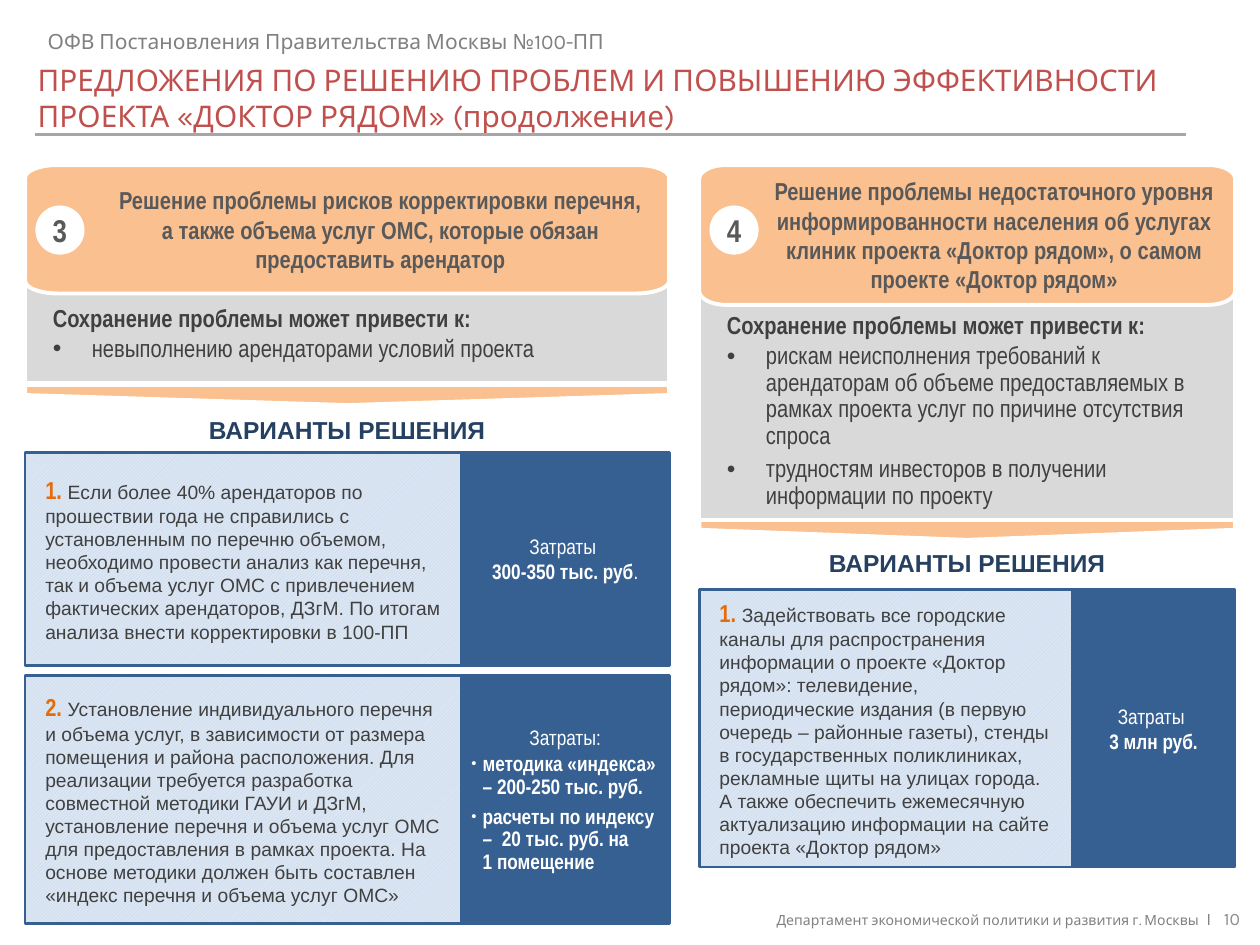
from dataclasses import dataclass
from math import cos, pi, sin

from lxml import etree
from pptx import Presentation
from pptx.dml.color import RGBColor
from pptx.enum.dml import MSO_PATTERN
from pptx.enum.shapes import MSO_CONNECTOR, MSO_SHAPE
from pptx.enum.text import MSO_ANCHOR, PP_ALIGN
from pptx.oxml.ns import qn
from pptx.util import Pt

LEFT, MID, RIGHT = PP_ALIGN.LEFT, PP_ALIGN.CENTER, PP_ALIGN.RIGHT
TOP, CENTER = MSO_ANCHOR.TOP, MSO_ANCHOR.MIDDLE
RECT, PLATE, OVAL = MSO_SHAPE.RECTANGLE, MSO_SHAPE.PENTAGON, MSO_SHAPE.OVAL
HATCH = MSO_PATTERN.LIGHT_UPWARD_DIAGONAL
STRAIGHT = MSO_CONNECTOR.STRAIGHT


@dataclass(frozen=True)
class Theme:
    sans: str = "Arial"
    slim: str = "Arial Narrow"
    brand: str = "Karla"
    white: str = "FFFFFF"
    red: str = "C0504D"
    rule: str = "A6A6A6"
    grey: str = "808080"
    page: str = "8C8C8C"
    peach: str = "FAC090"
    pale: str = "D9D9D9"
    dark: str = "404040"
    head: str = "595959"
    blue: str = "376092"
    navy: str = "254061"
    amber: str = "E46C0A"
    hatch: str = "C0D5EE"
    ice: str = "DCE6F2"
    title: float = 17
    badge: float = 18
    lead: float = 14
    note: float = 12
    text: float = 11
    mark: float = 10
    foot: float = 8


T = Theme()


@dataclass(frozen=True)
class Run:
    text: str
    size: float
    font: str
    color: str
    bold: bool = False


@dataclass(frozen=True)
class Para:
    runs: list[Run]
    align: PP_ALIGN = LEFT
    left: float = 0
    first: float = 0
    space: float = 1
    before: float = 0
    after: float = 0
    bullet: bool = False
    scale: int = 100


@dataclass(frozen=True)
class Box:
    x: float
    y: float
    w: float
    h: float


@dataclass(frozen=True)
class Card:
    y: float
    h: float
    mark: str
    text: str
    costs: list[Para]
    pad: float


@dataclass(frozen=True)
class Column:
    x: float
    w: float
    mark: str
    head: str
    inset: float
    head_h: float
    body: Box
    risks: list[str]
    after: float
    tip: float
    label: float
    split: float
    cards: list[Card]


def rgb(code: str) -> RGBColor:
    return RGBColor.from_string(code)


def write(shape, paras: list[Para], pads=(7.2, 3.6, 7.2, 3.6), anchor=CENTER) -> None:
    frame = shape.text_frame
    frame.word_wrap = True
    frame.vertical_anchor = anchor
    (frame.margin_left, frame.margin_top,
     frame.margin_right, frame.margin_bottom) = map(Pt, pads)
    for i, item in enumerate(paras):
        para = frame.add_paragraph() if i else frame.paragraphs[0]
        para.alignment = item.align
        para.line_spacing = item.space
        para.space_before, para.space_after = Pt(item.before), Pt(item.after)
        props = para._p.get_or_add_pPr()
        props.set("marL", str(Pt(item.left)))
        props.set("indent", str(Pt(item.first)))
        if item.bullet:
            size = etree.SubElement(props, qn("a:buSzPct"))
            size.set("val", str(item.scale * 1000))
            etree.SubElement(props, qn("a:buFont")).set("typeface", T.sans)
            etree.SubElement(props, qn("a:buChar")).set("char", "•")
        for part in item.runs:
            for j, line in enumerate(part.text.split("\n")):
                if j:
                    para.add_line_break()
                run = para.add_run()
                run.text = line
                font = run.font
                font.name, font.size, font.bold = part.font, Pt(part.size), part.bold
                font.color.rgb = rgb(part.color)


def paint(shape, fill: str, line: str = "", width: float = 0) -> None:
    shape.shadow.inherit = False
    shape.fill.solid()
    shape.fill.fore_color.rgb = rgb(fill)
    if line:
        shape.line.color.rgb = rgb(line)
        shape.line.width = Pt(width)
    else:
        shape.line.fill.background()


def add(slide, kind: MSO_SHAPE, box: Box, fill: str, line: str = "", width: float = 0):
    shape = slide.shapes.add_shape(kind, Pt(box.x), Pt(box.y), Pt(box.w), Pt(box.h))
    paint(shape, fill, line, width)
    return shape


def label(slide, box: Box, paras: list[Para], **form) -> None:
    shape = slide.shapes.add_textbox(Pt(box.x), Pt(box.y), Pt(box.w), Pt(box.h))
    write(shape, paras, **form)


def banner(slide, box: Box):
    rx, ry = box.w * 0.05, box.h * 0.1
    hubs = [(box.x + box.w - rx, box.y + box.h - ry), (box.x + rx, box.y + box.h - ry),
            (box.x + rx, box.y + ry), (box.x + box.w - rx, box.y + ry)]
    steps = 10
    dots = [(Pt(cx + rx * cos(a)), Pt(cy + ry * sin(a)))
            for turn, (cx, cy) in enumerate(hubs)
            for a in ((turn + k / steps) * pi / 2 for k in range(steps + 1))]
    pen = slide.shapes.build_freeform(*dots[0])
    pen.add_line_segments(dots[1:], close=True)
    shape = pen.convert_to_shape()
    paint(shape, T.peach, T.white, 2.25)
    return shape


def draw_card(slide, col: Column, card: Card) -> None:
    cost = add(slide, RECT, Box(col.x + col.split, card.y, col.w - col.split, card.h),
               T.blue, T.blue, 1.5)
    write(cost, card.costs, (card.pad, 2.9, card.pad, 2.9))
    plan = add(slide, PLATE, Box(col.x, card.y, col.split, card.h), T.ice, T.blue, 1.5)
    plan.adjustments[0] = 0
    plan.fill.patterned()
    plan.fill.pattern = HATCH
    plan.fill.fore_color.rgb, plan.fill.back_color.rgb = rgb(T.hatch), rgb(T.ice)
    write(plan, [Para([Run(card.mark, T.lead, T.slim, T.amber, True),
                       Run(card.text, T.text, T.sans, T.dark)])], (11.5, 5.8, 11.5, 5.8))


def draw_column(slide, col: Column) -> None:
    thick = 11.5
    tip = add(slide, PLATE, Box(col.x + (col.w - thick) / 2, col.tip + (thick - col.w) / 2,
                                thick, col.w), T.peach, T.white, 2.25)
    tip.rotation = 90
    body = add(slide, RECT, col.body, T.pale, T.white, 2.25)
    intro = Run("Сохранение проблемы может привести к:", T.lead, T.slim, T.dark, True)
    risks = [Para([Run(t, T.lead, T.slim, T.dark)], left=29.5, first=-22.3, space=0.9,
                  after=col.after, bullet=True) for t in col.risks]
    write(body, [Para([intro], left=22.3, first=-15.1, space=0.9, after=2), *risks],
          (8.6, 11.5, 8.6, 5.8), TOP)
    for card in col.cards:
        draw_card(slide, col, card)
    head = banner(slide, Box(col.x, 94.3, col.w, col.head_h))
    write(head, [Para([Run(col.head, T.lead, T.slim, T.head, True)], MID, col.inset)],
          (36.7, 2.2, 5.8, 2.2))
    badge = add(slide, OVAL, Box(col.x + 5.8, 117.4, 28.1, 28.1), T.white)
    write(badge, [Para([Run(col.mark, T.badge, T.slim, T.head, True)], MID)], (0, 0, 0, 0))
    label(slide, Box(col.x, col.label, col.w, 23.8),
          [Para([Run("ВАРИАНТЫ РЕШЕНИЯ", T.lead, T.sans, T.navy, True)], MID,
                space=0.9, after=6)], pads=(0, 0, 0, 0))


def price(text: str, bold: bool = False, tail: str = "") -> Para:
    runs = [Run(text, T.note, T.slim, T.white, bold)]
    return Para(runs + ([Run(tail, T.note, T.slim, T.white)] if tail else []), MID)


def point(text: str) -> Para:
    return Para([Run(text, T.note, T.slim, T.white, True)], left=6.5, first=-6.5,
                space=0.9, before=2, after=2, bullet=True, scale=70)


COLUMNS = [
    Column(14.4, 368, "3", "Решение проблемы рисков корректировки перечня,\nа также объема услуг ОМС, которые обязан предоставить арендатор",
           7.2, 73.4, Box(14.4, 163.4, 368, 55.4),
           ["невыполнению арендаторами условий проекта"], 2, 220, 234.7, 249.1, [
        Card(258.5, 121.7, "1. ", "Если более 40% арендаторов по прошествии года не справились с установленным по перечню объемом, необходимо провести анализ как перечня, так и объема услуг ОМС с привлечением фактических арендаторов, ДЗгМ. По итогам анализа внести корректировки в 100-ПП",
             [price("Затраты "), price("300-350 тыс. руб", True, ".")], 11.5),
        Card(386, 141.8, "2. ", "Установление индивидуального перечня и объема услуг, в зависимости от размера помещения и района расположения. Для реализации требуется разработка совместной методики ГАУИ и ДЗгМ, установление перечня и объема услуг ОМС для предоставления в рамках проекта. На основе методики должен быть составлен «индекс перечня и объема услуг ОМС»",
             [price("Затраты:"), point("методика «индекса» – 200-250 тыс. руб."),
              point("расчеты по индексу –  20 тыс. руб. на \n1 помещение")], 5.8)]),
    Column(399.6, 306.2, "4", "Решение проблемы недостаточного уровня информированности населения об услугах клиник проекта «Доктор рядом», о самом проекте «Доктор рядом»",
           0, 79.9, Box(399.6, 167.8, 306.2, 129.6),
           ["рискам неисполнения требований к арендаторам об объеме предоставляемых в рамках проекта услуг по причине отсутствия спроса",
            "трудностям инвесторов в получении информации по проекту"], 4, 297, 311, 213.1, [
        Card(337, 158.4, "1. ", "Задействовать все городские каналы для распространения информации о проекте «Доктор рядом»: телевидение, периодические издания (в первую очередь – районные газеты), стенды в государственных поликлиниках, рекламные щиты на улицах города. А также обеспечить ежемесячную актуализацию информации на сайте проекта «Доктор рядом»",
             [price("Затраты "), price("3 млн руб.", True)], 2.9)]),
]


def main() -> None:
    deck = Presentation()
    deck.slide_width, deck.slide_height = Pt(720), Pt(540)
    slide = deck.slides.add_slide(deck.slide_layouts[6])
    label(slide, Box(14.4, 31.7, 697.7, 48.2), [Para([Run(
        "ПРЕДЛОЖЕНИЯ ПО РЕШЕНИЮ ПРОБЛЕМ И ПОВЫШЕНИЮ ЭФФЕКТИВНОСТИ\nПРОЕКТА «ДОКТОР РЯДОМ» (продолжение)",
        T.title, T.brand, T.red)])], anchor=TOP)
    rule = slide.shapes.add_connector(STRAIGHT, Pt(20.2), Pt(77), Pt(677.5), Pt(77))
    rule.line.color.rgb, rule.line.width = rgb(T.rule), Pt(1.5)
    etree.SubElement(rule._element.spPr, qn("a:effectLst"))
    label(slide, Box(361.4, 519.1, 354.2, 11.5), [Para([
        Run("Департамент экономической политики и развития г. Москвы  ", T.foot, T.brand, T.grey),
        Run("I   ", T.mark, T.brand, T.grey), Run("10", T.mark, T.brand, T.page)], RIGHT)])
    label(slide, Box(20.2, 13, 521.3, 21.6), [Para([Run(
        "ОФВ Постановления Правительства Москвы №100-ПП", T.note, T.brand, T.grey)])], anchor=TOP)
    for col in COLUMNS:
        draw_column(slide, col)
    deck.save("out.pptx")


if __name__ == "__main__":
    main()
